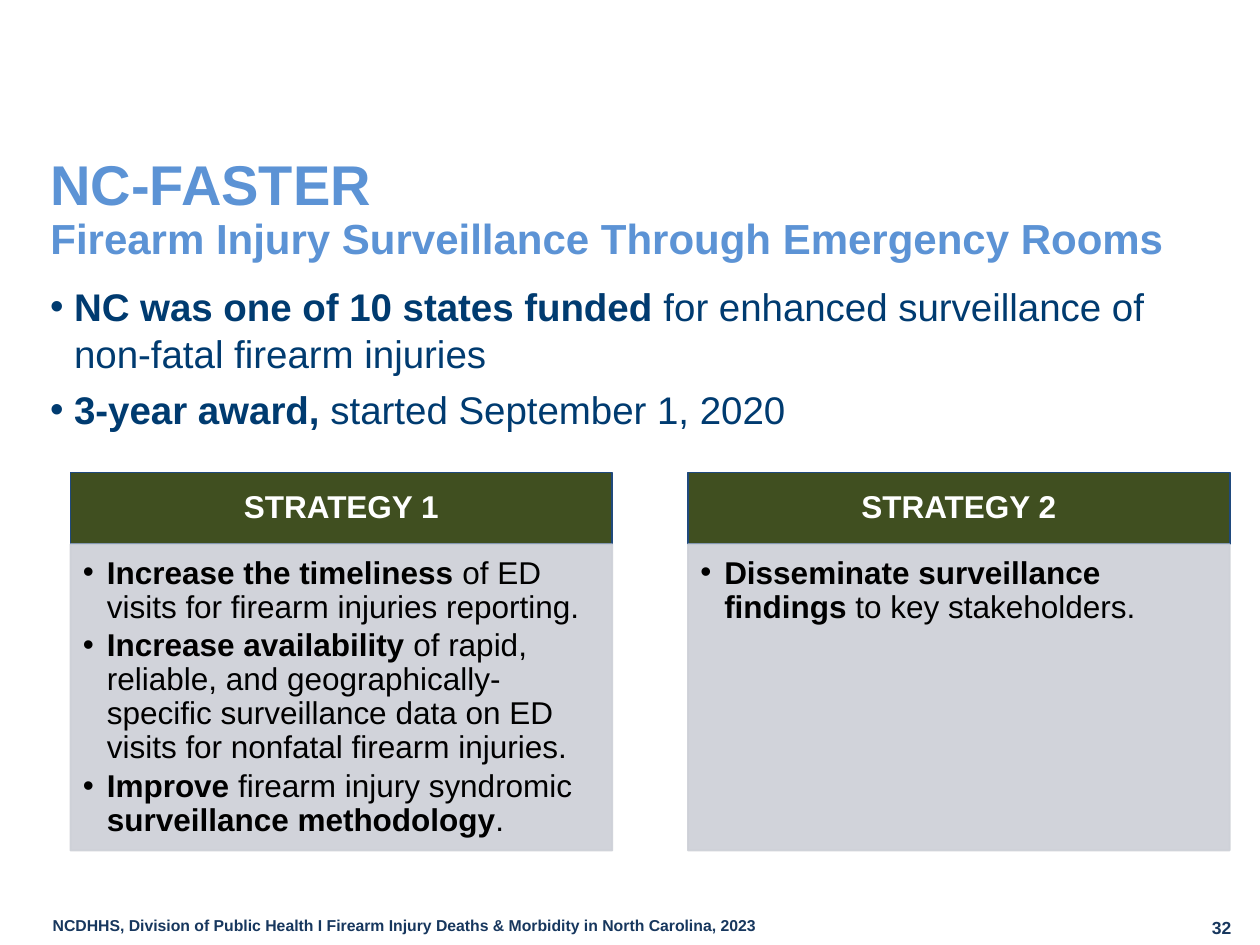
from lxml import etree
from pptx import Presentation
from pptx.dml.color import RGBColor
from pptx.enum.shapes import MSO_SHAPE
from pptx.enum.text import MSO_ANCHOR, MSO_AUTO_SIZE, PP_ALIGN
from pptx.oxml.ns import qn
from pptx.util import Inches, Pt

RECTANGLE = MSO_SHAPE.RECTANGLE
TOP, MIDDLE = MSO_ANCHOR.TOP, MSO_ANCHOR.MIDDLE
NO_AUTOFIT = MSO_AUTO_SIZE.NONE
LEFT, CENTER = PP_ALIGN.LEFT, PP_ALIGN.CENTER

FONT = "Arial"
TITLE_BLUE, BODY_BLUE, FOOTER_BLUE = "5C93D5", "003B70", "17375E"
HEADER_GREEN, HEADER_LINE = "404F20", "1F497D"
PANEL_GRAY, PANEL_LINE = "CCCFD7", "CDD0D7"
WHITE, BLACK = "FFFFFF", "000000"

COLUMN_LEFT, COLUMN_STEP, COLUMN_WIDTH = 0.56, 4.9, 4.3
HEADER_TOP, HEADER_HEIGHT, PANEL_HEIGHT = 3.75, 0.57, 2.43

# Each paragraph is a list of (text, bold) runs.
FUNDING = [
    [("NC was one of 10 states funded ", True),
     ("for enhanced surveillance of non-fatal firearm injuries", False)],
    [("3-year award, ", True), ("started September 1, 2020", False)],
]
STRATEGIES = [
    ("STRATEGY 1", [
        [("Increase the timeliness ", True),
         ("of ED visits for firearm injuries reporting.", False)],
        [("Increase availability ", True),
         ("of rapid, reliable, and geographically-specific surveillance data "
          "on ED visits for nonfatal firearm injuries.", False)],
        [("Improve ", True), ("firearm injury syndromic ", False),
         ("surveillance methodology", True), (".", False)],
    ]),
    ("STRATEGY 2", [
        [("Disseminate surveillance findings ", True),
         ("to key stakeholders.", False)],
    ]),
]


def rgb(color):
    return RGBColor.from_string(color)


def add_run(paragraph, text, size, color, bold=True):
    run = paragraph.add_run()
    run.text = text
    run.font.name = FONT
    run.font.size = Pt(size)
    run.font.bold = bold
    run.font.color.rgb = rgb(color)


def next_paragraph(text_frame, index):
    return text_frame.add_paragraph() if index else text_frame.paragraphs[0]


def add_bullet(paragraph):
    properties = paragraph._p.get_or_add_pPr()
    properties.set("marL", str(Inches(0.19)))
    properties.set("indent", str(-Inches(0.19)))
    font = etree.SubElement(properties, qn("a:buFont"))
    font.set("typeface", FONT)
    bullet = etree.SubElement(properties, qn("a:buChar"))
    bullet.set("char", "•")


def fill_bullets(text_frame, items, size, color, before=0, after=0, spacing=1.0):
    for index, runs in enumerate(items):
        paragraph = next_paragraph(text_frame, index)
        paragraph.alignment = LEFT
        paragraph.line_spacing = spacing
        paragraph.space_before = Pt(before)
        paragraph.space_after = Pt(after)
        add_bullet(paragraph)
        for text, bold in runs:
            add_run(paragraph, text, size, color, bold)


def set_margins(text_frame, left, top, right, bottom):
    text_frame.margin_left = Inches(left)
    text_frame.margin_top = Inches(top)
    text_frame.margin_right = Inches(right)
    text_frame.margin_bottom = Inches(bottom)


def set_opacity(color_format_parent, percent):
    for color in color_format_parent.iter(qn("a:srgbClr")):
        alpha = etree.SubElement(color, qn("a:alpha"))
        alpha.set("val", str(percent * 1000))


def add_text_box(slide, left, top, width, height):
    box = slide.shapes.add_textbox(
        Inches(left), Inches(top), Inches(width), Inches(height))
    box.text_frame.word_wrap = True
    return box.text_frame


def add_rectangle(slide, left, top, height, fill, line):
    shape = slide.shapes.add_shape(
        RECTANGLE, Inches(left), Inches(top), Inches(COLUMN_WIDTH), Inches(height))
    shape.shadow.inherit = False
    shape.fill.solid()
    shape.fill.fore_color.rgb = rgb(fill)
    shape.line.color.rgb = rgb(line)
    shape.line.width = Pt(1)
    shape.text_frame.word_wrap = True
    return shape


def format_title(slide):
    title = slide.shapes.title
    title.left, title.top = Inches(0.3), Inches(1.2)
    title.width, title.height = Inches(9.05), Inches(1.07)
    text_frame = title.text_frame
    text_frame.auto_size = NO_AUTOFIT
    text_frame.vertical_anchor = TOP
    lines = [("NC-FASTER", 32),
             ("Firearm Injury Surveillance Through Emergency Rooms", 24)]
    for index, (text, size) in enumerate(lines):
        paragraph = next_paragraph(text_frame, index)
        paragraph.alignment = LEFT
        paragraph.line_spacing = 0.9
        add_run(paragraph, text, size, TITLE_BLUE)


def add_strategy(slide, left, heading, items):
    header = add_rectangle(
        slide, left, HEADER_TOP, HEADER_HEIGHT, HEADER_GREEN, HEADER_LINE)
    header.text_frame.vertical_anchor = MIDDLE
    set_margins(header.text_frame, 0.14, 0.08, 0.14, 0.08)
    paragraph = header.text_frame.paragraphs[0]
    paragraph.alignment = CENTER
    paragraph.line_spacing = 0.9
    add_run(paragraph, heading, 18, WHITE)

    panel = add_rectangle(slide, left, HEADER_TOP + HEADER_HEIGHT, PANEL_HEIGHT,
                          PANEL_GRAY, PANEL_LINE)
    set_opacity(panel._element.spPr, 90)
    panel.text_frame.vertical_anchor = TOP
    set_margins(panel.text_frame, 0.1, 0.1, 0.14, 0.16)
    fill_bullets(panel.text_frame, items, 18, BLACK, after=2.7, spacing=0.9)


def add_footer(slide):
    source = add_text_box(slide, 0.32, 7.22, 8.74, 0.29)
    add_run(source.paragraphs[0],
            "NCDHHS, Division of Public Health Ι Firearm Injury Deaths & "
            "Morbidity in North Carolina, 2023", 9, FOOTER_BLUE)
    number = add_text_box(slide, 9.52, 7.23, 0.42, 0.27)
    add_run(number.paragraphs[0], "32", 10, FOOTER_BLUE)


def main():
    presentation = Presentation()
    presentation.slide_width = Inches(10)
    presentation.slide_height = Inches(7.5)
    slide = presentation.slides.add_slide(presentation.slide_layouts[5])

    format_title(slide)
    funding = add_text_box(slide, 0.3, 2.2, 9.37, 4.53)
    fill_bullets(funding, FUNDING, 22, BODY_BLUE, before=6)
    for index, (heading, items) in enumerate(STRATEGIES):
        add_strategy(slide, COLUMN_LEFT + index * COLUMN_STEP, heading, items)
    add_footer(slide)

    presentation.save("out.pptx")


if __name__ == "__main__":
    main()
